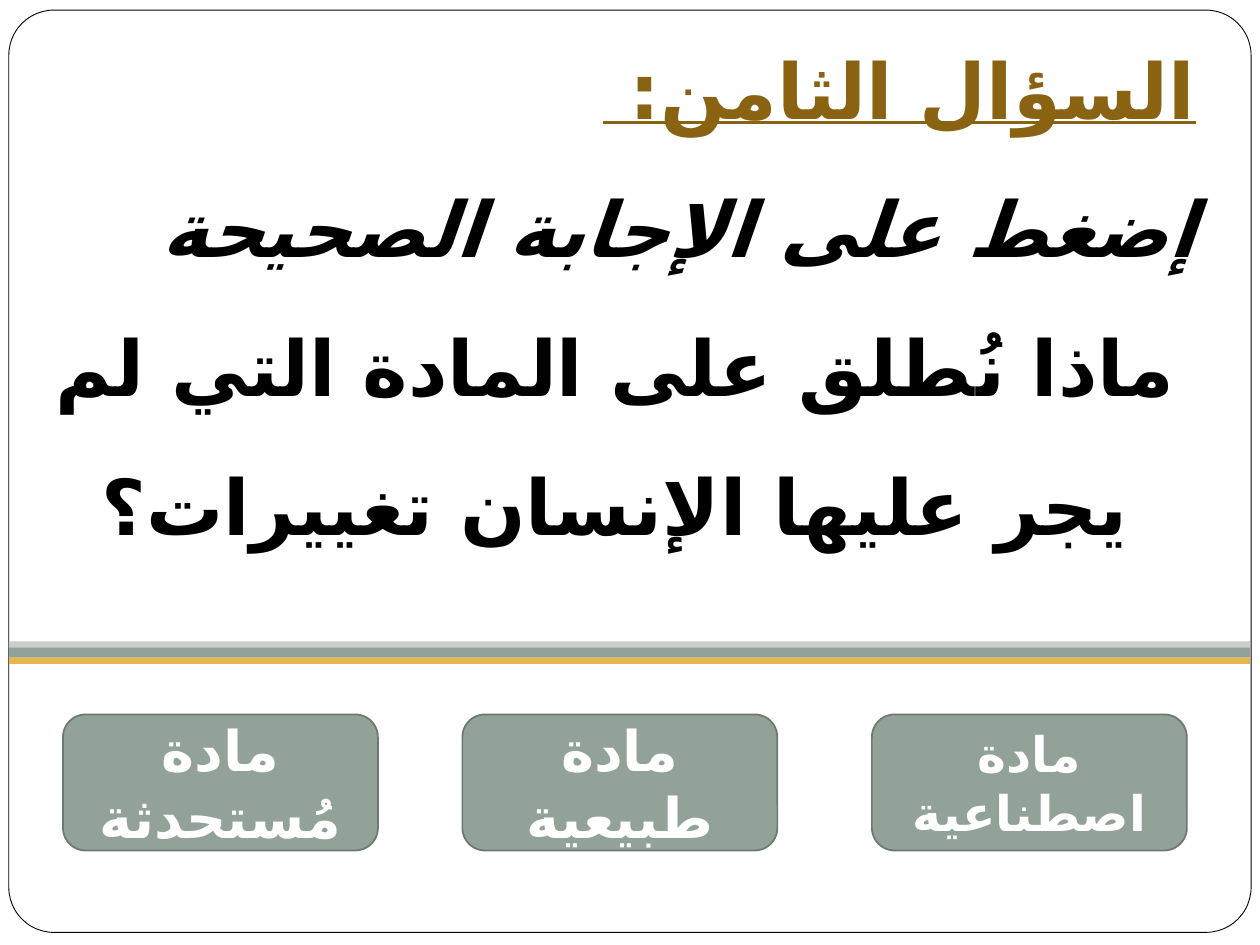
from lxml.etree import SubElement
from pptx import Presentation
from pptx.dml.color import RGBColor
from pptx.enum.shapes import MSO_SHAPE
from pptx.enum.text import MSO_ANCHOR, MSO_AUTO_SIZE, PP_ALIGN
from pptx.oxml.ns import qn
from pptx.util import Inches, Pt

COLORS = {
    "white": "FFFFFF",
    "black": "000000",
    "sage": "93A299",
    "pale_sage": "C8CECA",
    "dark_sage": "6D7871",
    "amber": "E8B54D",
    "brown": "896212",
}
FONT = "Lato"
ARABIC_FONT = "DejaVu Sans"

# Bands: top, height, colour
BANDS = [(5.12, 0.1, "sage"), (5.09, 0.05, "pale_sage"), (5.22, 0.05, "amber")]

# Question lines: text, alignment, colour, further font values
QUESTION = [
    ("السؤال الثامن: ", PP_ALIGN.RIGHT, "brown", {"underline": True}),
    ("إضغط على الإجابة الصحيحة", PP_ALIGN.RIGHT, "black", {"italic": True}),
    ("ماذا نُطلق على المادة التي لم يجر عليها الإنسان تغييرات؟",
     PP_ALIGN.CENTER, "black", {}),
]

# Answers: left, text, size
ANSWERS = [
    (6.92, "مادة اصطناعية", 28),
    (3.67, "مادة طبيعية", 32),
    (0.5, "مادة مُستحدثة", 32),
]


def rgb(name):
    return RGBColor.from_string(COLORS[name])


def add_block(page, kind, place, fill, line=None, width=1):
    box = page.shapes.add_shape(kind, *map(Inches, place))
    box.shadow.inherit = False
    box.fill.solid()
    box.fill.fore_color.rgb = rgb(fill)
    if line:
        box.line.color.rgb = rgb(line)
        box.line.width = Pt(width)
    else:
        box.line.fill.background()
    return box


def write_line(para, text, size, color, align, extra):
    para.alignment = align
    span = para.add_run()
    span.text = text
    values = {"name": FONT, "size": Pt(size), "bold": True, **extra}
    for key, value in values.items():
        setattr(span.font, key, value)
    span.font.color.rgb = rgb(color)
    # Arabic letters take the complex-script font
    SubElement(span.font._element, qn("a:cs"), typeface=ARABIC_FONT)


def add_background(page):
    frame = add_block(page, MSO_SHAPE.ROUNDED_RECTANGLE,
                      (0.07, 0.08, 9.86, 7.32), "white", "black", 0.5)
    frame.adjustments[0] = 0.049
    for top, height, color in BANDS:
        add_block(page, MSO_SHAPE.RECTANGLE, (0.07, top, 9.85, height), color)


def add_question(page):
    box = page.shapes.title
    place = {"left": 0.17, "top": -0.08, "width": 9.42, "height": 4.54}
    for key, value in place.items():
        setattr(box, key, Inches(value))
    # Bring the title in front of the background
    page.shapes._spTree.append(box._element)
    frame = box.text_frame
    frame.word_wrap = True
    frame.vertical_anchor = MSO_ANCHOR.TOP
    frame.auto_size = MSO_AUTO_SIZE.SHAPE_TO_FIT_TEXT
    for index, (text, align, color, extra) in enumerate(QUESTION):
        para = frame.add_paragraph() if index else frame.paragraphs[0]
        para.line_spacing = 1.5
        write_line(para, text, 44, color, align, extra)
        para._p.get_or_add_pPr().set("rtl", "1")


def add_answer(page, left, text, size):
    box = add_block(page, MSO_SHAPE.ROUNDED_RECTANGLE,
                    (left, 5.67, 2.5, 1.08), "sage", "dark_sage")
    frame = box.text_frame
    frame.word_wrap = True
    frame.vertical_anchor = MSO_ANCHOR.MIDDLE
    write_line(frame.paragraphs[0], text, size, "white", PP_ALIGN.CENTER, {})


def main():
    deck = Presentation()
    deck.slide_width, deck.slide_height = Inches(10), Inches(7.5)
    page = deck.slides.add_slide(deck.slide_layouts[5])
    add_background(page)
    add_question(page)
    for answer in ANSWERS:
        add_answer(page, *answer)
    deck.save("out.pptx")


if __name__ == "__main__":
    main()
